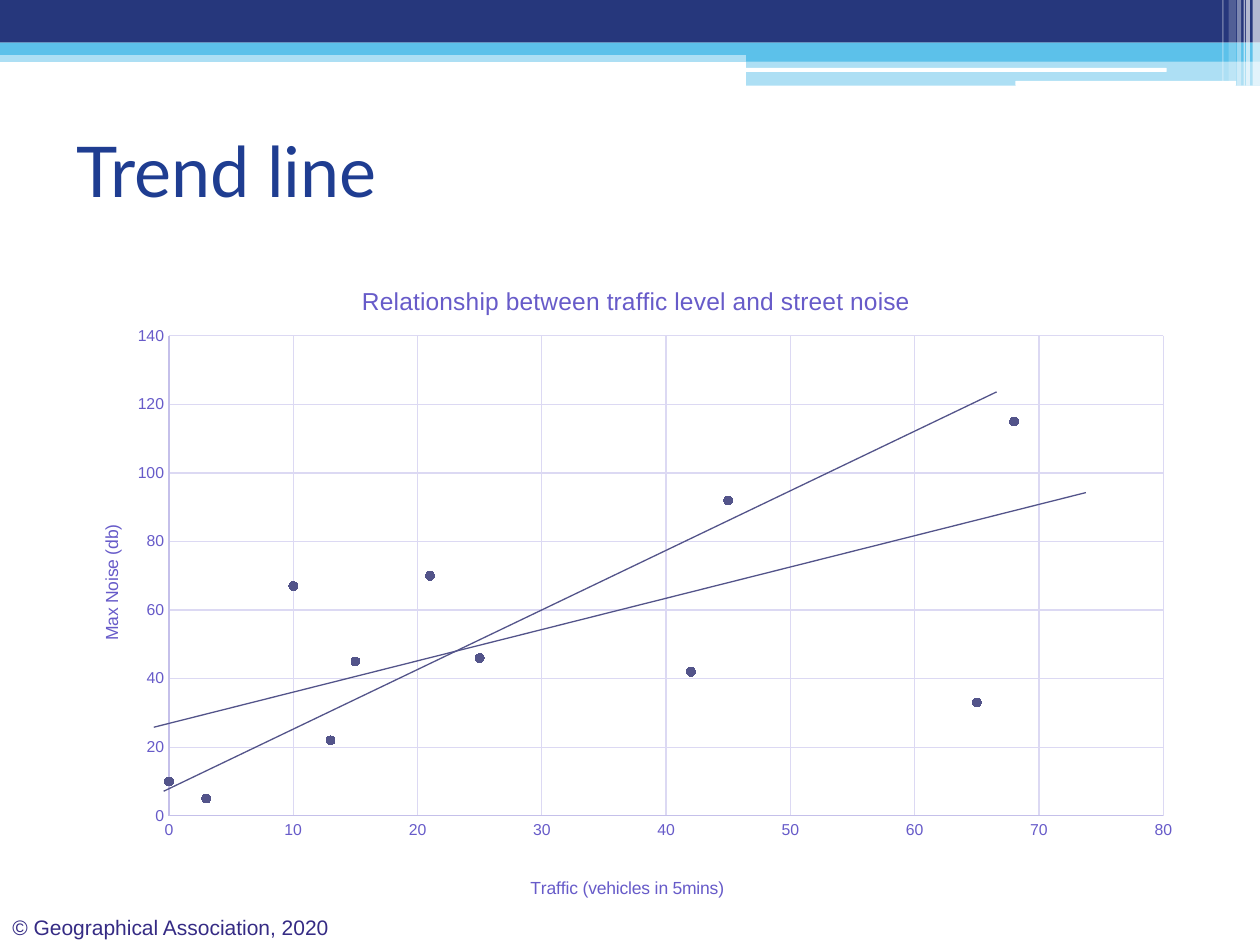
import pptx
import pptx.chart.data
import pptx.dml.color
import pptx.enum.chart
import pptx.enum.shapes
import pptx.enum.text
import pptx.oxml
import pptx.oxml.ns
import pptx.util
from lxml import etree

Cm, Pt = pptx.util.Cm, pptx.util.Pt
SHAPE = pptx.enum.shapes.MSO_SHAPE
qn = pptx.oxml.ns.qn

THEME = {
    "navy": "26377C", "sky": "5CC1EA", "white": "FFFFFF",
    "title": "1F3D91", "footer": "352B84", "label": "675BC9",
    "axis": "C5C0EA", "grid": "DCD9F3", "data": "53548A",
    "heading_font": "Lato", "body_font": "Arial",
    "title_size": 40, "footer_size": 12, "chart_title_size": 14,
    "axis_title_size": 10, "tick_size": 9, "line_width": 0.75,
}

# left, top, width, height in cm; colour; opacity in percent
BANDS = [
    (0, 1.02, 25.4, 0.23, "sky", 50),
    (0, 0, 25.4, 0.86, "navy", 100),
    (0, 0.86, 25.4, 0.25, "sky", 100),
    (15.04, 0.99, 10.36, 0.25, "sky", 100),
    (15.04, 1.22, 10.36, 0.51, "sky", 50),
]
ROUNDED_BARS = [
    (15.01, 1.37, 8.51, 0.08, "white", 100),
    (20.47, 1.63, 4.45, 0.1, "white", 100),
]
# left, width, height in cm; opacity in percent
STRIPES = [
    (25.25, 0.15, 1.73, 65), (25.12, 0.08, 1.73, 65), (25.07, 0.03, 1.73, 60),
    (24.94, 0.08, 1.73, 40), (24.77, 0.15, 1.63, 20), (24.64, 0.03, 1.63, 30),
]

TITLE = "Trend line"
FOOTER = "© Geographical Association, 2020"
CHART_BOX = (1.27, 5.13, 22.83, 13.13)
CHART_TITLE = "Relationship between traffic level and street noise"
X_TITLE = "Traffic (vehicles in 5mins)"
Y_TITLE = "Max Noise (db)"
# traffic, noise
READINGS = [(15, 45), (10, 67), (3, 5), (68, 115), (45, 92), (65, 33),
            (25, 46), (13, 22), (0, 10), (21, 70), (42, 42)]
TREND_LINES = [(3.1, 14.66, 21.89, 9.93), (3.3, 15.95, 20.09, 7.9)]


def rgb(name):
    return pptx.dml.color.RGBColor.from_string(THEME[name])


def style_font(font, size, color, family="body_font"):
    font.size, font.name, font.bold = Pt(THEME[size]), THEME[family], False
    font.color.rgb = rgb(color)


def style_line(line, color):
    line.color.rgb = rgb(color)
    line.width = Pt(THEME["line_width"])


def add_bar(slide, kind, left, top, width, height, color, opacity):
    sp = slide.shapes.add_shape(kind, Cm(left), Cm(top), Cm(width), Cm(height))
    sp.shadow.inherit = False
    sp.fill.solid()
    sp.fill.fore_color.rgb = rgb(color)
    sp.line.fill.background()
    if opacity < 100:
        clr = sp.fill._xPr.find(".//" + qn("a:srgbClr"))
        etree.SubElement(clr, qn("a:alpha")).set("val", str(opacity * 1000))


def add_text(slide, box, text, size, color, family="body_font", wrap=True):
    tf = slide.shapes.add_textbox(*map(Cm, box)).text_frame
    tf.word_wrap = wrap
    tf.text = text
    style_font(tf.paragraphs[0].runs[0].font, size, color, family)
    return tf


def place(parent, **values):
    """Fix the position of a chart part, in fractions of the chart area."""
    layout = parent.find(qn("c:layout"))
    if layout is None:
        layout = etree.Element(qn("c:layout"))
        tx = parent.find(qn("c:tx"))
        if tx is None:
            parent.insert(0, layout)
        else:
            tx.addnext(layout)
    for child in list(layout):
        layout.remove(child)
    manual = etree.SubElement(layout, qn("c:manualLayout"))
    if "w" in values:
        etree.SubElement(manual, qn("c:layoutTarget")).set("val", "inner")
    for key in "xy":
        etree.SubElement(manual, qn(f"c:{key}Mode")).set("val", "edge")
    for key, value in values.items():
        etree.SubElement(manual, qn(f"c:{key}")).set("val", str(value))


def set_title(owner, text, size, x, y):
    tf = owner.chart_title.text_frame if hasattr(owner, "chart_title") else owner.axis_title.text_frame
    tf.text = text
    style_font(tf.paragraphs[0].runs[0].font, size, "label")
    title = owner.chart_title if hasattr(owner, "chart_title") else owner.axis_title
    place(title._element, x=x, y=y)


def style_axis(axis, maximum, step):
    axis.minimum_scale, axis.maximum_scale, axis.major_unit = 0, maximum, step
    axis.major_tick_mark = axis.minor_tick_mark = pptx.enum.chart.XL_TICK_MARK.NONE
    axis.has_major_gridlines = True
    style_line(axis.major_gridlines.format.line, "grid")
    style_line(axis.format.line, "axis")
    style_font(axis.tick_labels.font, "tick_size", "label")


def add_scatter(slide):
    data = pptx.chart.data.XyChartData()
    series = data.add_series("Series 1")
    for traffic, noise in READINGS:
        series.add_data_point(traffic, noise)
    chart = slide.shapes.add_chart(pptx.enum.chart.XL_CHART_TYPE.XY_SCATTER,
                                   *map(Cm, CHART_BOX), data).chart
    style_font(chart.font, "axis_title_size", "footer")
    chart.has_legend = False
    chart.plots[0].vary_by_categories = False

    style_axis(chart.category_axis, 80, 10)
    style_axis(chart.value_axis, 140, 20)
    set_title(chart, CHART_TITLE, "chart_title_size", 0.26, 0.04)
    set_title(chart.category_axis, X_TITLE, "axis_title_size", 0.41, 0.95)
    set_title(chart.value_axis, Y_TITLE, "axis_title_size", 0.03, 0.41)
    place(chart.plots[0]._element.getparent(), x=0.0936, y=0.125, w=0.878, h=0.737)

    s = chart.plots[0].series[0]
    s.smooth = False
    s.format.line.fill.background()
    s.marker.style = pptx.enum.chart.XL_MARKER_STYLE.CIRCLE
    s.marker.size = 5
    s.marker.format.fill.solid()
    s.marker.format.fill.fore_color.rgb = rgb("data")
    style_line(s.marker.format.line, "data")


def main():
    prs = pptx.Presentation()
    prs.slide_width, prs.slide_height = Cm(25.4), Cm(19.05)
    slide = prs.slides.add_slide(prs.slide_layouts[6])

    for bar in BANDS:
        add_bar(slide, SHAPE.RECTANGLE, *bar)
    for bar in ROUNDED_BARS:
        add_bar(slide, SHAPE.ROUNDED_RECTANGLE, *bar)
    for left, width, height, opacity in STRIPES:
        add_bar(slide, SHAPE.RECTANGLE, left, 0, width, height, "white", opacity)

    add_text(slide, (0, 18.31, 7.29, 0.76), FOOTER, "footer_size", "footer", wrap=False)
    tf = add_text(slide, (1.3, 1.93, 22.86, 2.97), TITLE, "title_size", "title", "heading_font")
    tf.vertical_anchor = pptx.enum.text.MSO_ANCHOR.MIDDLE

    add_scatter(slide)
    for ends in TREND_LINES:
        line = slide.shapes.add_connector(
            pptx.enum.shapes.MSO_CONNECTOR.STRAIGHT, *map(Cm, ends))
        style_line(line.line, "data")
        etree.SubElement(line._element.spPr, qn("a:effectLst"))

    prs.save("out.pptx")


if __name__ == "__main__":
    main()
